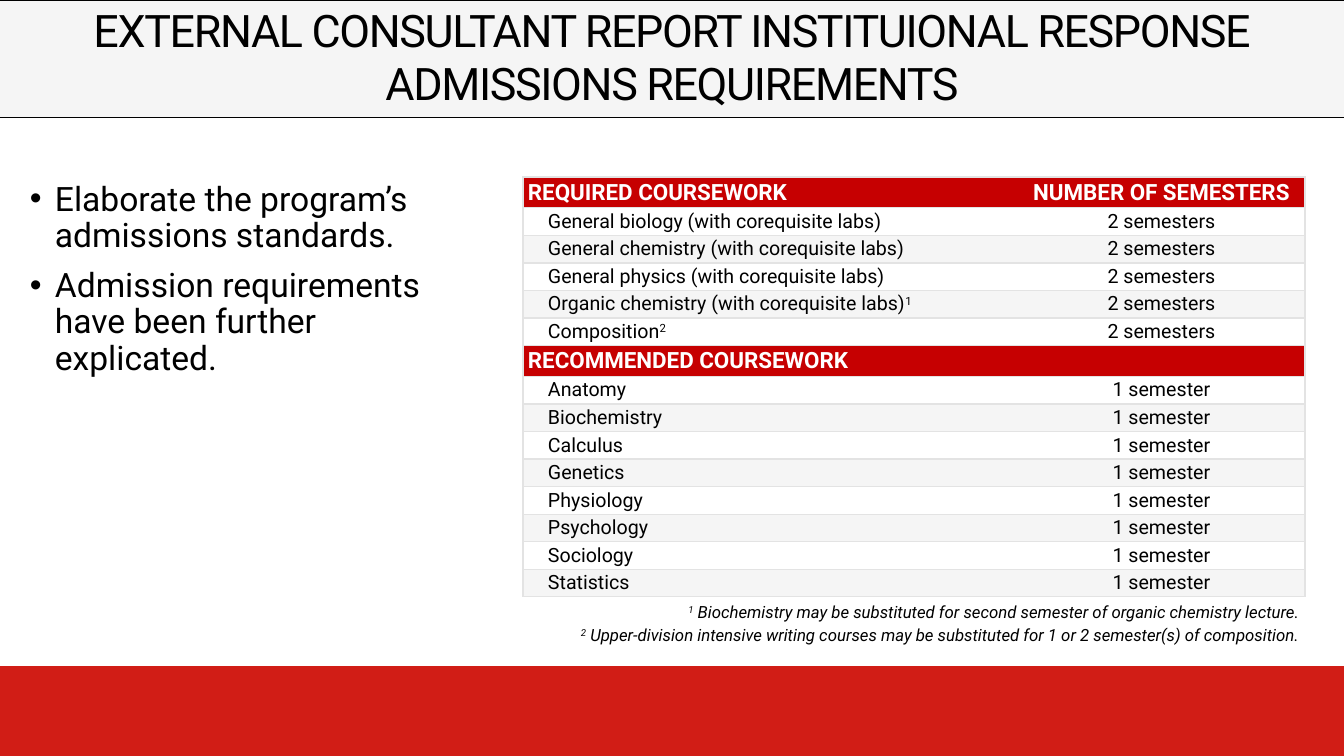
from lxml.etree import SubElement
from pptx import Presentation
from pptx.dml.color import RGBColor
from pptx.enum.shapes import MSO_SHAPE
from pptx.enum.text import MSO_ANCHOR, PP_ALIGN
from pptx.oxml import parse_xml
from pptx.oxml.ns import nsdecls, qn
from pptx.util import Emu, Pt

SCALE = 914400 / 100.8
FONT = "Roboto"
COLORS = {
    "black": "000000",
    "white": "FFFFFF",
    "band": "F5F5F5",
    "border": "E3E3E3",
    "heading": "C60001",
    "footer": "D11D16",
}
NO_GRID_STYLE = "{2D5ABB26-0587-4C30-8999-92F81FD0307C}"
TITLE = ["EXTERNAL CONSULTANT REPORT INSTITUIONAL RESPONSE", "ADMISSIONS REQUIREMENTS"]
BULLETS = [
    "Elaborate the program’s admissions standards.",
    "Admission requirements have been further explicated.",
]
SECTIONS = [
    ("REQUIRED COURSEWORK", "NUMBER OF SEMESTERS", "2 semesters", [
        "General biology (with corequisite labs)",
        "General chemistry (with corequisite labs)",
        "General physics (with corequisite labs)",
        "Organic chemistry (with corequisite labs)^1",
        "Composition^2",
    ]),
    ("RECOMMENDED COURSEWORK", "", "1 semester", [
        "Anatomy", "Biochemistry", "Calculus", "Genetics",
        "Physiology", "Psychology", "Sociology", "Statistics",
    ]),
]
FOOTNOTES = [
    "^1^ Biochemistry may be substituted for second semester of organic chemistry lecture.",
    "^2^ Upper-division intensive writing courses may be substituted for 1 or 2 semester(s) of composition.",
]


def px(length):
    return Emu(round(length * SCALE))


def color(name):
    return RGBColor.from_string(COLORS[name])


def write_text(paragraph, text, size=14, ink="black", bold=False, italic=False,
               align=PP_ALIGN.LEFT, tracking=None):
    paragraph.alignment = align
    paragraph.font.size = Pt(size)
    for index, piece in enumerate(text.split("^")):
        if not piece:
            continue
        run = paragraph.add_run()
        run.text = piece
        run.font.name = FONT
        run.font.size = Pt(size)
        run.font.bold = bold
        run.font.italic = italic
        run.font.color.rgb = color(ink)
        properties = run.font._element
        if index % 2:
            properties.set("baseline", "30000")
        if tracking is not None:
            properties.set("spc", str(tracking))


class SlideBuilder:
    """Holds the current slide and draws styled elements on it."""

    def __init__(self, presentation):
        self.slide = presentation.slides.add_slide(presentation.slide_layouts[6])

    def bar(self, left, top, width, height, fill):
        shape = self.slide.shapes.add_shape(
            MSO_SHAPE.RECTANGLE, px(left), px(top), px(width), px(height))
        shape.shadow.inherit = False
        shape.fill.solid()
        shape.fill.fore_color.rgb = color(fill)
        shape.line.color.rgb = color(fill)
        shape.line.width = Pt(1)

    def bullets(self, left, top, width, height, items):
        box = self.slide.shapes.add_textbox(px(left), px(top), px(width), px(height))
        frame = box.text_frame
        frame.word_wrap = True
        for index, item in enumerate(items):
            paragraph = frame.add_paragraph() if index else frame.paragraphs[0]
            properties = paragraph._p.get_or_add_pPr()
            properties.set("marL", str(px(25)))
            properties.set("indent", str(-px(25)))
            SubElement(properties, qn("a:buFont")).set("typeface", "Arial")
            SubElement(properties, qn("a:buChar")).set("char", "•")
            paragraph.line_spacing = 0.9
            if index:
                paragraph.space_before = Pt(10)
            write_text(paragraph, item, size=24)

    def table(self, left, top, widths, heights):
        frame = self.slide.shapes.add_table(
            len(heights), len(widths), px(left), px(top), px(sum(widths)), px(sum(heights)))
        table = frame.table
        table.first_row = False
        table.horz_banding = False
        table._tbl.tblPr.find(qn("a:tableStyleId")).text = NO_GRID_STYLE
        for column, width in zip(table.columns, widths):
            column.width = px(width)
        for row, height in zip(table.rows, heights):
            row.height = px(height)
        return table

    def cell(self, cell, lines, fill=None, insets=(5, 2, 5, 2), sides="",
             border="border", **text_format):
        cell.vertical_anchor = MSO_ANCHOR.MIDDLE
        cell.margin_left, cell.margin_top, cell.margin_right, cell.margin_bottom = map(px, insets)
        if fill:
            cell.fill.solid()
            cell.fill.fore_color.rgb = color(fill)
        else:
            cell.fill.background()
        properties = cell._tc.get_or_add_tcPr()
        for index, side in enumerate(sides):
            properties.insert(index, parse_xml(
                f'<a:ln{side} {nsdecls("a")} w="12700"><a:solidFill>'
                f'<a:srgbClr val="{COLORS[border]}"/></a:solidFill></a:ln{side}>'))
        for index, line in enumerate(lines):
            frame = cell.text_frame
            paragraph = frame.add_paragraph() if index else frame.paragraphs[0]
            write_text(paragraph, line, **text_format)

    def title(self, lines):
        table = self.table(0, 0, [1344], [115])
        self.cell(table.cell(0, 0), lines, fill="band", insets=(10, 5, 10, 5), sides="TB",
                  border="black", size=32, align=PP_ALIGN.CENTER, tracking=-100)

    def course_row(self, table, row, course, semesters, indent=5, **cell_format):
        self.cell(table.cell(row, 0), [course], insets=(indent, 2, 5, 2),
                  sides="LTB", **cell_format)
        self.cell(table.cell(row, 1), [semesters], sides="RTB",
                  align=PP_ALIGN.CENTER, **cell_format)

    def coursework(self, left, top, sections, footnotes):
        row_count = sum(1 + len(courses) for *_, courses in sections) + len(footnotes)
        table = self.table(left, top, [495, 287], [26] * row_count)
        row = 0
        for heading, column_heading, semesters, courses in sections:
            self.course_row(table, row, heading, column_heading, fill="heading",
                            size=16, ink="white", bold=True)
            for index, course in enumerate(courses):
                self.course_row(table, row + 1 + index, course, semesters, indent=25,
                                fill="band" if index % 2 else None)
            row += 1 + len(courses)
        for index, footnote in enumerate(footnotes):
            note = table.cell(row + index, 0)
            note.merge(table.cell(row + index, 1))
            self.cell(note, [footnote], insets=(5, 0 if index else 5, 5, 0),
                      size=12, italic=True, align=PP_ALIGN.RIGHT)


def main():
    presentation = Presentation()
    presentation.slide_width = px(1344)
    presentation.slide_height = px(756)
    builder = SlideBuilder(presentation)
    builder.bar(0, 667, 1344, 89, "footer")
    builder.bullets(20, 177, 436, 480, BULLETS)
    builder.title(TITLE)
    builder.coursework(523, 177, SECTIONS, FOOTNOTES)
    presentation.save("out.pptx")


if __name__ == "__main__":
    main()
